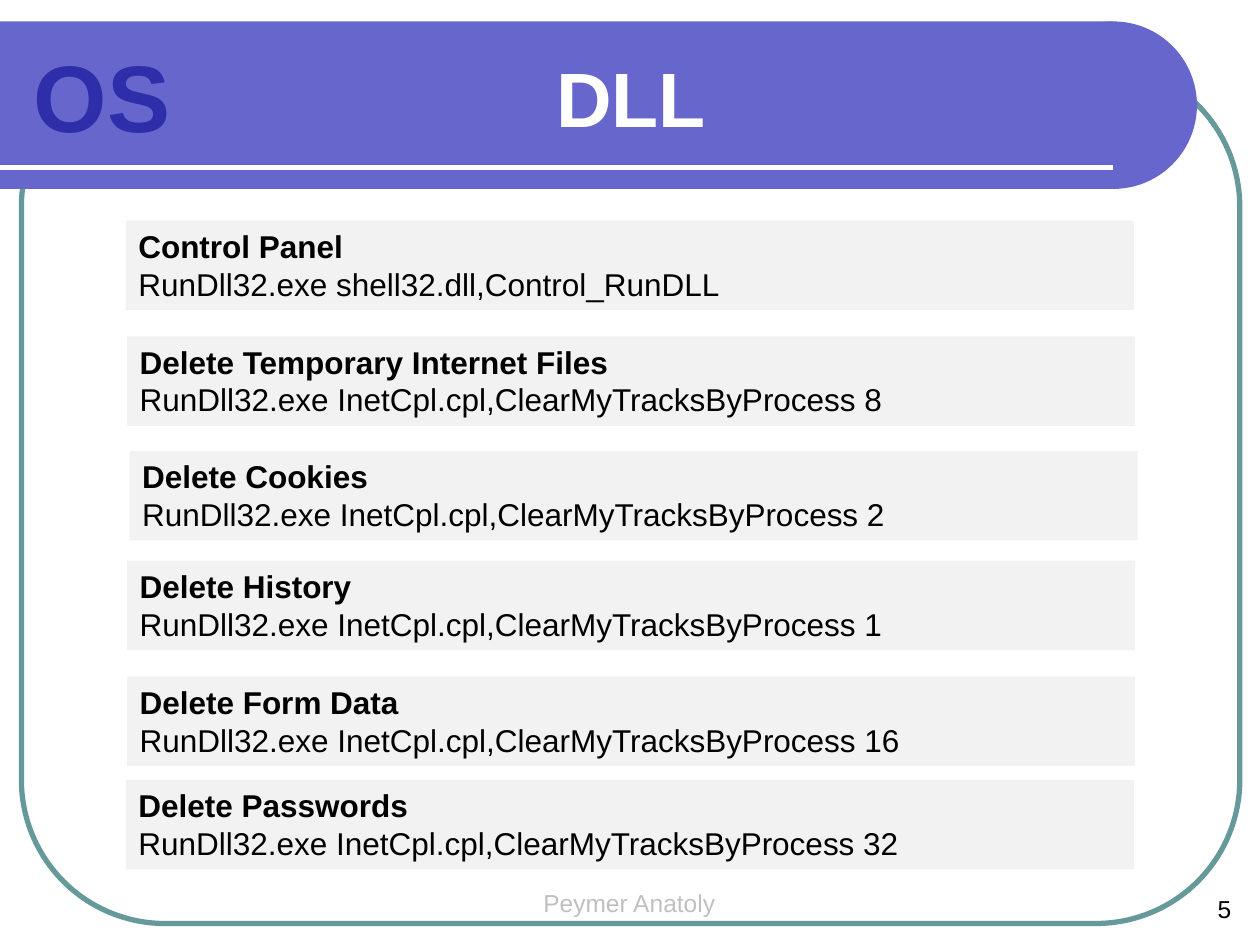
"""Build the DLL slide with its six command panels."""
from lxml.etree import SubElement
from pptx import Presentation
from pptx.dml.color import RGBColor
from pptx.enum.shapes import MSO_CONNECTOR as Connector, MSO_SHAPE as Shape
from pptx.enum.text import MSO_ANCHOR as Anchor, MSO_AUTO_SIZE as Fit, PP_ALIGN as Align
from pptx.oxml.ns import qn
from pptx.util import Inches, Pt

COLORS = {
    "band": "6666CC", "frame": "669999", "white": "FFFFFF", "panel": "F2F2F2",
    "text": "000000", "footer": "C0C0C0", "mark": "2E2EAA",
}
CLEAR = "RunDll32.exe InetCpl.cpl,ClearMyTracksByProcess"
PANELS = [
    (1, 1.75, "Control Panel", "RunDll32.exe shell32.dll,Control_RunDLL"),
    (1.01, 2.67, "Delete Temporary Internet Files", f"{CLEAR} 8"),
    (1.03, 3.58, "Delete Cookies", f"{CLEAR} 2"),
    (1.01, 4.45, "Delete History", f"{CLEAR} 1"),
    (1.01, 5.37, "Delete Form Data", f"{CLEAR} 16"),
    (1, 6.19, "Delete Passwords", f"{CLEAR} 32"),
]


class SlideStyle:
    """Holds the colours, the font and the current slide."""

    def __init__(self, page, colors, font="Arial"):
        self.page, self.colors, self.font = page, colors, font

    def color(self, name):
        return RGBColor.from_string(self.colors[name])

    def add_lines(self, frame, lines, align=Align.LEFT):
        for index, (text, size, color, bold) in enumerate(lines):
            para = frame.add_paragraph() if index else frame.paragraphs[0]
            para.alignment = align
            span = para.add_run()
            span.text = text
            values = {"name": self.font, "size": Pt(size), "bold": bold}
            for name, value in values.items():
                setattr(span.font, name, value)
            span.font.color.rgb = self.color(color)

    def shape(self, kind, place, fill=None, line=None):
        box = self.page.shapes.add_shape(kind, *map(Inches, place))
        box.shadow.inherit = False
        if fill:
            box.fill.solid()
            box.fill.fore_color.rgb = self.color(fill)
        else:
            box.fill.background()
        if line:
            box.line.color.rgb = self.color(line)
            box.line.width = Pt(3)
        else:
            box.line.fill.background()
        return box

    def rule(self, start, end, color):
        line = self.page.shapes.add_connector(
            Connector.STRAIGHT, *map(Inches, start + end))
        line.line.color.rgb = self.color(color)
        line.line.width = Pt(3)
        SubElement(line._element.spPr, qn("a:effectLst"))

    def text(self, place, line, align=Align.LEFT):
        box = self.page.shapes.add_textbox(*map(Inches, place))
        box.text_frame.word_wrap = True
        self.add_lines(box.text_frame, [line], align)

    def title(self, place, line):
        box = self.page.shapes.title
        box._element.getparent().append(box._element)
        for name, value in zip(("left", "top", "width", "height"), place):
            setattr(box, name, Inches(value))
        values = {"word_wrap": False, "auto_size": Fit.NONE,
                  "vertical_anchor": Anchor.MIDDLE}
        for name, value in values.items():
            setattr(box.text_frame, name, value)
        self.add_lines(box.text_frame, [line], Align.CENTER)

    def panel(self, left, top, heading, command):
        box = self.shape(Shape.RECTANGLE, (left, top, 8, 0.71), "panel")
        box.text_frame.vertical_anchor = Anchor.TOP
        self.add_lines(box.text_frame, [(heading, 18, "text", True),
                                        (command, 18, "text", False)])


def main():
    deck = Presentation()
    deck.slide_width, deck.slide_height = Inches(10), Inches(7.5)
    style = SlideStyle(deck.slides.add_slide(deck.slide_layouts[5]), COLORS)

    style.text((4.08, 7, 1.83, 0.35),
               ("Peymer Anatoly", 14, "footer", False), Align.CENTER)
    style.text((9.2, 7.05, 0.67, 0.33), ("5", 14, "text", False), Align.RIGHT)
    frame = style.shape(Shape.ROUNDED_RECTANGLE, (0.17, 0.5, 9.67, 6.83), line="frame")
    frame.adjustments[0] = 0.167
    style.shape(Shape.RECTANGLE, (0, 0.17, 8.83, 1.33), "band")
    style.shape(Shape.OVAL, (8.17, 0.17, 1.33, 1.33), "band")
    style.rule((0, 1.33), (8.83, 1.33), "white")
    style.title((3.26, 0.17, 3.5, 1.2), ("DLL", 44, "white", True))
    style.text((0.17, 0.25, 1.42, 1.01), ("OS", 54, "mark", True))
    for panel in PANELS:
        style.panel(*panel)

    deck.save("out.pptx")


if __name__ == "__main__":
    main()
